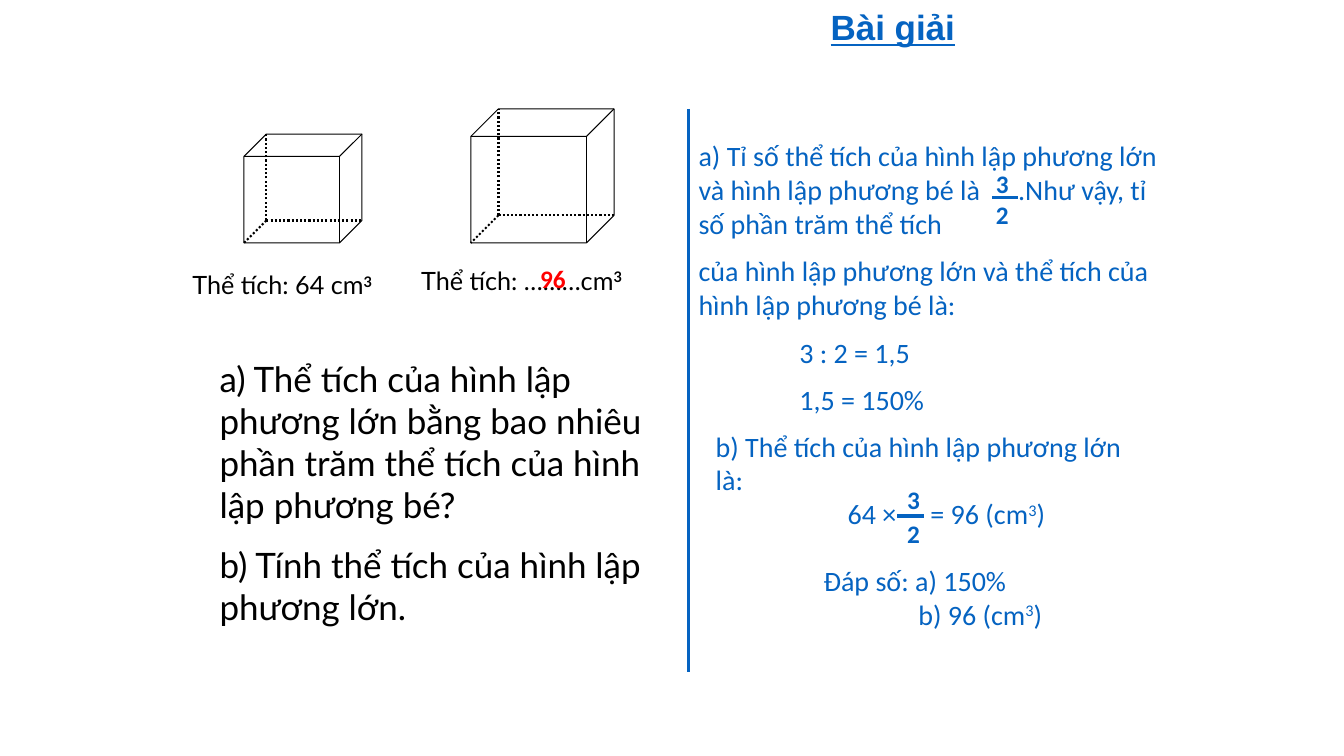
import pptx
import pptx.dml.color
import pptx.enum.dml
import pptx.enum.shapes
import pptx.util
from dataclasses import dataclass
from lxml import etree
from pptx.oxml.ns import qn

Inches = pptx.util.Inches
Pt = pptx.util.Pt


@dataclass(frozen=True)
class Theme:
    black: str = "000000"
    blue: str = "0563C1"
    red: str = "FF0000"
    title_font: str = "Arial"
    question_font: str = "Lato"
    answer_font: str = "Calibri"
    large: int = 25
    medium: int = 20
    small: int = 18
    thin: float = 0.75
    dotted: float = 1.5
    thick: float = 2.25


THEME = Theme()


def rgb(code):
    return pptx.dml.color.RGBColor.from_string(code)


def add_span(para, text, font, size, color, bold=False, underline=False, raised=0):
    """Add one run; raised is the superscript height in percent."""
    span = para.add_run()
    span.text = text
    span.font.name = font
    span.font.size = Pt(size)
    span.font.color.rgb = rgb(color)
    span.font.bold = bold
    span.font.underline = underline
    if raised:
        span.font._element.set("baseline", str(raised * 1000))
    return span


def add_box(page, left, top, width, height):
    box = page.shapes.add_textbox(Inches(left), Inches(top), Inches(width), Inches(height))
    box.text_frame.word_wrap = True
    return box.text_frame


def add_para(frame, space=0, tabs=()):
    """Use the first paragraph of a new frame, then append further ones."""
    para = frame.paragraphs[0]
    if para.runs:
        para = frame.add_paragraph()
        para.space_before = Pt(space)
    if tabs:
        tab_list = etree.SubElement(para._p.get_or_add_pPr(), qn("a:tabLst"))
        for position in tabs:
            etree.SubElement(tab_list, qn("a:tab"), pos=str(Inches(position)), algn="l")
    return para


def add_line(page, start, end, color, width, dotted=False):
    line = page.shapes.add_connector(
        pptx.enum.shapes.MSO_CONNECTOR.STRAIGHT, *map(Inches, start + end))
    line.line.color.rgb = rgb(color)
    line.line.width = Pt(width)
    if dotted:
        line.line.dash_style = pptx.enum.dml.MSO_LINE.ROUND_DOT
    etree.SubElement(line._element.spPr, qn("a:effectLst"))


def add_cube(page, left, top, width, height):
    """Outline cube with its three hidden edges dotted."""
    ratio = 0.206
    cube = page.shapes.add_shape(
        pptx.enum.shapes.MSO_SHAPE.CUBE, *map(Inches, (left, top, width, height)))
    cube.adjustments[0] = ratio
    cube.shadow.inherit = False
    cube.fill.background()
    cube.line.color.rgb = rgb(THEME.black)
    cube.line.width = Pt(THEME.thin)
    depth = ratio * min(width, height)
    bottom = top + height
    corner = (left + depth, bottom - depth)
    for end in ((left + depth, top), (left + width, bottom - depth), (left, bottom)):
        add_line(page, corner, end, THEME.black, THEME.dotted, dotted=True)


def add_volume(page, left, top, width, text, raised):
    para = add_para(add_box(page, left, top, width, 0.4))
    style = (THEME.question_font, THEME.small, THEME.black)
    add_span(para, text, *style)
    add_span(para, "3", *style, bold=True, raised=raised)


def add_number(page, left, top, width, text, color):
    para = add_para(add_box(page, left, top, width, 0.4))
    add_span(para, text, THEME.answer_font, THEME.small, color, bold=True)


def add_fraction(page, left, top, shift, rise):
    """Three halves; left and top give the start of the bar."""
    for text, offset in (("3", -rise), ("2", -0.03)):
        add_number(page, left + shift, top + offset, 0.66, text, THEME.blue)
    add_line(page, (left, top), (left + 0.26, top), THEME.blue, THEME.thick)


def add_title(page, left, top, width, height):
    para = add_para(add_box(page, left, top, width, height))
    add_span(para, "Bài giải", THEME.title_font, THEME.large, THEME.blue,
             bold=True, underline=True)


def add_figures(page, left, top):
    """Small and large cube with their volumes."""
    add_cube(page, left + 0.61, top + 0.25, 1.17, 1.08)
    add_cube(page, left + 2.86, top, 1.42, 1.33)
    add_volume(page, left, top + 1.54, 2.08, "Thể tích: 64 cm", 26)
    add_volume(page, left + 2.27, top + 1.5, 2.5, "Thể tích: ………cm", 30)
    add_number(page, left + 3.45, top + 1.48, 1.17, "96", THEME.red)


def add_questions(page, left, top, width, height):
    frame = add_box(page, left, top, width, height)
    for text in (
        "a) Thể tích của hình lập phương lớn bằng bao nhiêu phần trăm "
        "thể tích của hình lập phương bé?",
        "b) Tính thể tích của hình lập phương lớn.",
    ):
        para = add_para(frame, THEME.large / 2)
        add_span(para, text, THEME.question_font, THEME.large, THEME.black)


def add_answer_a(page, left, top, width, height):
    frame = add_box(page, left, top, width, height)
    for text, tabs in (
        ("a) Tỉ số thể tích của hình lập phương lớn và hình lập phương bé là"
         "\t.Như vậy, tỉ số phần trăm thể tích", (3.17,)),
        ("của hình lập phương lớn và thể tích của hình lập phương bé là:", ()),
        ("\t3 : 2 = 1,5", (1,)),
        ("\t1,5 = 150%", (1,)),
    ):
        para = add_para(frame, THEME.medium / 2, tabs)
        add_span(para, text, THEME.answer_font, THEME.medium, THEME.blue)
    add_fraction(page, left + 3.01, top + 0.63, -0.06, 0.34)


def add_answer_b(page, left, top, width, height):
    frame = add_box(page, left, top, width, height)
    style = (THEME.answer_font, THEME.medium, THEME.blue)
    for text, tabs, space, cubic in (
        ("b) Thể tích của hình lập phương lớn là:", (), 0, False),
        ("\t64 ×\t= 96 (cm", (1.31, 2.13), 0, True),
        ("\tĐáp số: a) 150%", (1.07,), 24, False),
        ("\tb) 96 (cm", (2.01,), 0, True),
    ):
        para = add_para(frame, space, tabs)
        add_span(para, text, *style)
        if cubic:
            add_span(para, "3", *style, raised=30)
            add_span(para, ")", *style)
    add_fraction(page, left + 1.9, top + 0.91, 0, 0.36)


def main():
    deck = pptx.Presentation()
    deck.slide_width = Inches(13.33)
    deck.slide_height = Inches(7.5)
    page = deck.slides.add_slide(deck.slide_layouts[6])

    add_title(page, 8.14, 0.01, 1.5, 0.52)

    # Problem on the left
    add_figures(page, 1.81, 1.08)
    add_questions(page, 2.08, 3.5, 4.5, 2.81)

    # Divider and solution on the right
    add_line(page, (6.83, 1.08), (6.83, 6.67), THEME.blue, THEME.thick)
    add_answer_a(page, 6.83, 1.33, 4.83, 3.43)
    add_answer_b(page, 7, 4.21, 4.33, 2.12)

    deck.save("out.pptx")


if __name__ == "__main__":
    main()
